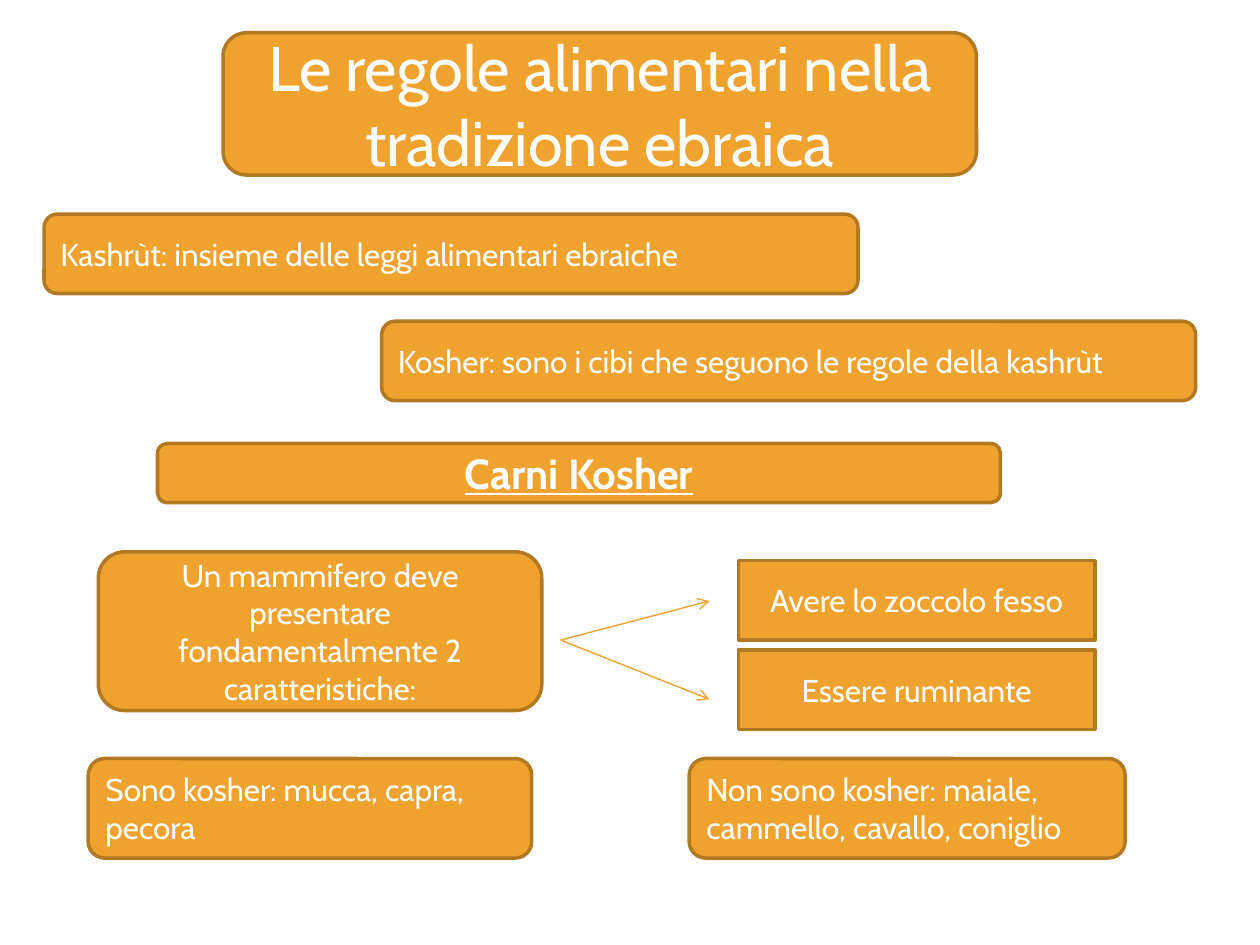
from dataclasses import dataclass

from lxml import etree
from pptx import Presentation
from pptx.dml.color import RGBColor
from pptx.enum.shapes import MSO_CONNECTOR, MSO_SHAPE
from pptx.enum.text import MSO_ANCHOR, PP_ALIGN
from pptx.oxml.ns import qn
from pptx.util import Inches, Pt

ROUNDED = MSO_SHAPE.ROUNDED_RECTANGLE
RECTANGLE = MSO_SHAPE.RECTANGLE
STRAIGHT = MSO_CONNECTOR.STRAIGHT
MIDDLE = MSO_ANCHOR.MIDDLE
LEFT = PP_ALIGN.LEFT
CENTER = PP_ALIGN.CENTER

SLIDE_WIDTH = Inches(10)
SLIDE_HEIGHT = Inches(7.5)
COLUMN = SLIDE_WIDTH / 100
ROW = SLIDE_HEIGHT / 75


@dataclass(frozen=True)
class Theme:
    font: str = "Cabin"
    fill: RGBColor = RGBColor(0xF0, 0xA2, 0x2E)
    border: RGBColor = RGBColor(0xB2, 0x78, 0x22)
    text: RGBColor = RGBColor(0xFF, 0xFF, 0xFF)
    title_size: int = 36
    heading_size: int = 24
    body_size: int = 18
    border_width: float = 2
    arrow_width: float = 0.79


THEME = Theme()


@dataclass(frozen=True)
class Box:
    left: float
    top: float
    width: float
    height: float

    def inset(self, left, top, width, height):
        return Box(self.left + left, self.top + top, width, height)

    def point(self, column, row):
        return round((self.left + column) * COLUMN), round((self.top + row) * ROW)

    def size(self):
        return round(self.width * COLUMN), round(self.height * ROW)


def write_text(shape, text, size=THEME.body_size, align=CENTER, bold=False, underline=False):
    frame = shape.text_frame
    frame.word_wrap = True
    frame.vertical_anchor = MIDDLE
    para = frame.paragraphs[0]
    para.alignment = align
    span = para.add_run()
    span.text = text
    span.font.name = THEME.font
    span.font.size = Pt(size)
    span.font.bold = bold
    span.font.underline = underline
    span.font.color.rgb = THEME.text


def add_panel(page, box, text, kind=ROUNDED, **text_format):
    panel = page.shapes.add_shape(kind, *box.point(0, 0), *box.size())
    panel.shadow.inherit = False
    panel.fill.solid()
    panel.fill.fore_color.rgb = THEME.fill
    panel.line.color.rgb = THEME.border
    panel.line.width = Pt(THEME.border_width)
    write_text(panel, text, **text_format)


def add_arrow(page, start, end):
    arrow = page.shapes.add_connector(STRAIGHT, *start, *end)
    arrow.line.color.rgb = THEME.fill
    arrow.line.width = Pt(THEME.arrow_width)
    properties = arrow._element.spPr
    etree.SubElement(properties.find(qn("a:ln")), qn("a:tailEnd"), type="arrow")
    etree.SubElement(properties, qn("a:effectLst"))


def add_definitions(page, box, first, second):
    width, height = 64.6, 6.3
    add_panel(page, box.inset(0, 0, width, height), first, align=LEFT)
    lower = box.inset(box.width - width, box.height - height, width, height)
    add_panel(page, lower, second, align=LEFT)


def add_requirements(page, box, statement, options):
    add_panel(page, box.inset(0, 0, 35.2, 12.6), statement)
    width, height, gap, first_top = 28.3, 6.3, 0.8, 0.7
    for index, (option, arrow_row) in enumerate(options):
        add_arrow(page, box.point(36.7, 7), box.point(48.5, arrow_row))
        top = first_top + index * (height + gap)
        cell = box.inset(box.width - width, top, width, height)
        add_panel(page, cell, option, kind=RECTANGLE)


def add_examples(page, box, allowed, forbidden):
    allowed_width, forbidden_width = 35.2, 34.6
    add_panel(page, box.inset(0, 0, allowed_width, box.height), allowed, align=LEFT)
    right = box.inset(box.width - forbidden_width, 0, forbidden_width, box.height)
    add_panel(page, right, forbidden, align=LEFT)


def main():
    deck = Presentation()
    deck.slide_width = SLIDE_WIDTH
    deck.slide_height = SLIDE_HEIGHT
    page = deck.slides.add_slide(deck.slide_layouts[6])
    add_panel(
        page,
        Box(17.7, 2.6, 59.8, 11.3),
        "Le regole alimentari nella tradizione ebraica",
        size=THEME.title_size,
    )
    add_definitions(
        page,
        Box(3.5, 17, 91.4, 14.8),
        "Kashrùt: insieme delle leggi alimentari ebraiche",
        "Kosher: sono i cibi che seguono le regole della kashrùt",
    )
    add_panel(
        page,
        Box(12.5, 35.2, 66.9, 4.7),
        "Carni Kosher",
        size=THEME.heading_size,
        bold=True,
        underline=True,
    )
    add_requirements(
        page,
        Box(7.8, 43.8, 79.1, 14.1),
        "Un mammifero deve presentare fondamentalmente 2 caratteristiche:",
        [("Avere lo zoccolo fesso", 3.9), ("Essere ruminante", 11.7)],
    )
    add_examples(
        page,
        Box(7, 60.2, 82.3, 7.9),
        "Sono kosher: mucca, capra, pecora",
        "Non sono kosher: maiale, cammello, cavallo, coniglio",
    )
    deck.save("out.pptx")


if __name__ == "__main__":
    main()
